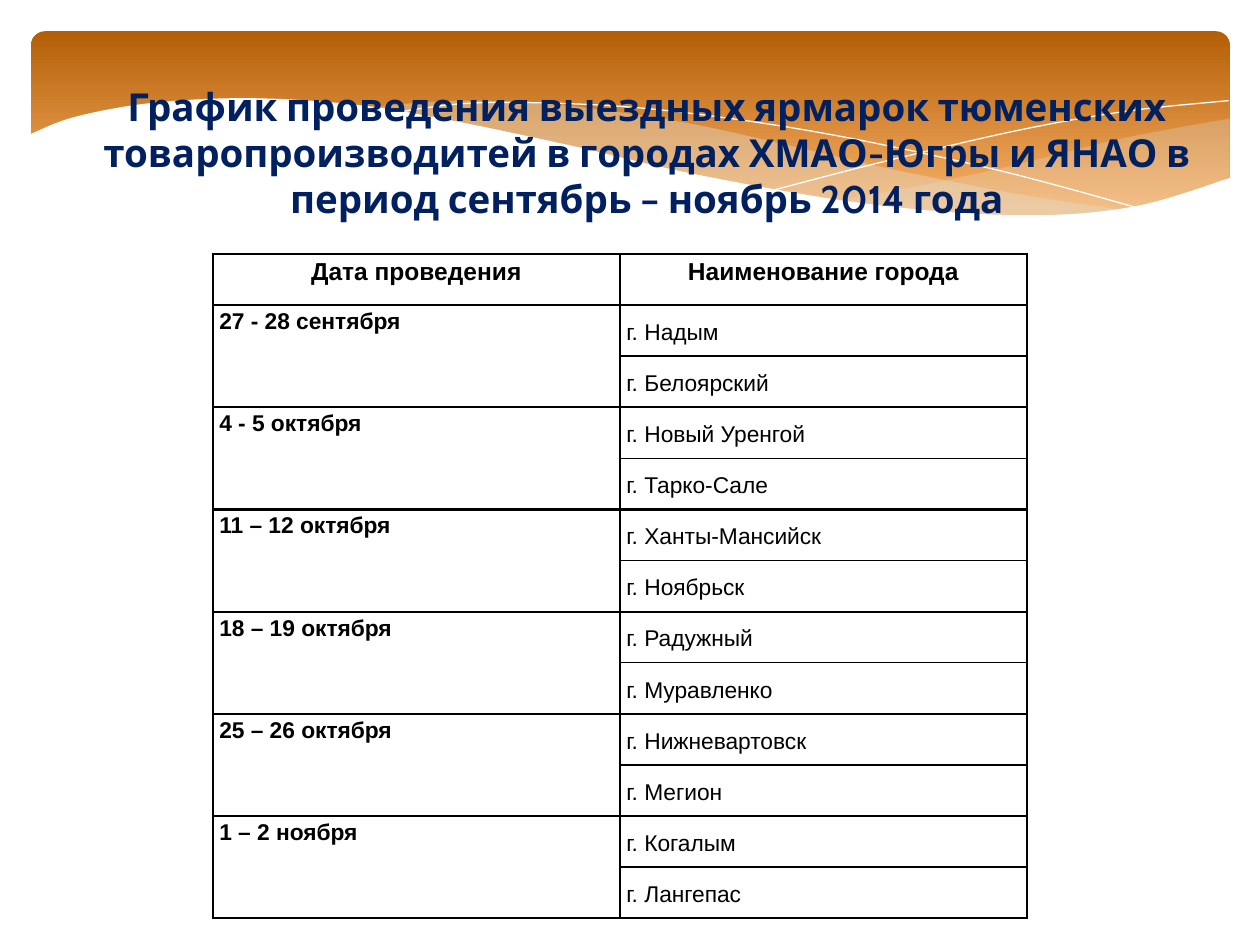
"""Builds the slide with the autumn schedule of travelling fairs."""
from itertools import chain
from lxml.etree import SubElement
from pptx import Presentation
from pptx.dml.color import RGBColor
from pptx.enum.shapes import MSO_SHAPE
from pptx.enum.text import MSO_ANCHOR as Anchor, PP_ALIGN as Align
from pptx.oxml.ns import qn
from pptx.util import Cm, Pt

WHITE = RGBColor(0xFF, 0xFF, 0xFF)
BLACK = RGBColor(0x00, 0x00, 0x00)
NAVY = RGBColor(0x00, 0x20, 0x60)
DARK_ORANGE = RGBColor(0xB4, 0x5F, 0x07)
LIGHT_ORANGE = RGBColor(0xF9, 0xB2, 0x68)
SAND = RGBColor(0xE3, 0xDE, 0xD1)

TITLE = ("График проведения выездных ярмарок тюменских товаропроизводитей "
         "в городах ХМАО-Югры и ЯНАО в период сентябрь – ноябрь 2014 года")
HEADERS = ("Дата проведения", "Наименование города")
FAIRS = [
    ("27 - 28 сентября", ("г. Надым", "г. Белоярский")),
    ("4 - 5 октября", ("г. Новый Уренгой", "г. Тарко-Сале")),
    ("11 – 12 октября", ("г. Ханты-Мансийск", "г. Ноябрьск")),
    ("18 – 19 октября", ("г. Радужный", "г. Муравленко")),
    ("25 – 26 октября", ("г. Нижневартовск", "г. Мегион")),
    ("1 – 2 ноября", ("г. Когалым", "г. Лангепас")),
]

SHORT_WAVE_TOP = [(24.79, 2.39), (22.63, 2.79), (20.45, 3.33), (18.5, 3.75), (16.79, 4.06)]
SHORT_WAVE_BOTTOM = [(16.79, 4.06), (18.92, 4.29), (21.21, 4.37), (22.99, 4.22), (24.79, 3.58)]
LONG_WAVE_TOP = [
    (7.26, 2.18), (9.17, 2.03), (11.23, 2.11), (13.74, 2.46),
    (15.98, 2.95), (17.93, 3.4), (20.5, 3.91), (22.68, 4.24),
]
LONG_WAVE_BOTTOM = [
    (22.68, 4.24), (20.78, 4.39), (18.34, 4.27), (16.1, 3.96),
    (13.46, 3.43), (11.4, 2.95), (9.19, 2.46), (7.26, 2.18),
]
FALLING_LINE = [
    (7.85, 2.29), (9.5, 2.08), (11.91, 2.11), (14.12, 2.31),
    (16.89, 2.74), (20.19, 3.45), (23.04, 4.22),
]
RISING_LINE = [(15.57, 3.84), (17.65, 3.3), (20.47, 2.64), (22.73, 2.24), (24.77, 2.03)]
WHITE_CREST = [
    (24.82, 3.58), (22.83, 4.17), (20.52, 4.34), (17.48, 4.11), (14.1, 3.53), (11.35, 2.9),
    (8.64, 2.34), (6.88, 2.08), (4.9, 1.98), (3.02, 2.08), (1.5, 2.36), (0.58, 2.72),
]
WHITE_BASE = [(0.58, 5.69), (24.82, 5.69)]

FILLED_WAVES = [
    ((SHORT_WAVE_TOP, SHORT_WAVE_BOTTOM), SAND, 29),
    ((LONG_WAVE_TOP, LONG_WAVE_BOTTOM), SAND, 40),
]
WAVE_LINES = [FALLING_LINE, RISING_LINE]
STEPS_PER_SPAN = 8

THIN, THICK = 1, 1.5
HEADER_SIZE, BODY_SIZE = 14, 13


def spline(before, start, end, after, t):
    """Gives one coordinate of a Catmull-Rom curve between start and end."""
    return 0.5 * (2 * start + (end - before) * t
                  + (2 * before - 5 * start + 4 * end - after) * t ** 2
                  + (3 * start - before - 3 * end + after) * t ** 3)


def smooth_curve(knots):
    """Returns close points on the smooth curve that runs through the knots."""
    padded = [knots[0], *knots, knots[-1]]
    points = [
        tuple(spline(*axis, step / STEPS_PER_SPAN) for axis in zip(*span))
        for span in zip(padded, padded[1:], padded[2:], padded[3:])
        for step in range(STEPS_PER_SPAN)
    ]
    return points + [knots[-1]]


def add_outline(slide, edges, close):
    """Adds a freeform whose edges are smooth curves with corners between them."""
    curves = chain.from_iterable(smooth_curve(edge) for edge in edges)
    points = [(Cm(x), Cm(y)) for x, y in curves]
    builder = slide.shapes.build_freeform(*points[0], scale=1)
    builder.add_line_segments(points[1:], close=close)
    shape = builder.convert_to_shape()
    shape.shadow.inherit = False
    return shape


def add_filled_wave(slide, edges, color, opacity=100):
    """Adds a closed wave with a plain or see-through fill."""
    wave = add_outline(slide, edges, close=True)
    wave.line.fill.background()
    wave.fill.solid()
    wave.fill.fore_color.rgb = color
    if opacity < 100:
        fill_color = wave.element.spPr.find(qn("a:solidFill"))[0]
        SubElement(fill_color, qn("a:alpha"), val=str(opacity * 1000))


def add_wave_line(slide, knots):
    """Adds an open white hairline."""
    wave_line = add_outline(slide, [knots], close=False)
    wave_line.fill.background()
    wave_line.line.color.rgb = WHITE
    wave_line.line.width = Pt(0)


def add_band(slide):
    """Adds the orange band behind the title."""
    band = slide.shapes.add_shape(
        MSO_SHAPE.ROUNDED_RECTANGLE, Cm(0.63), Cm(0.63), Cm(24.16), Cm(3.96))
    band.adjustments[0] = 0.07
    band.shadow.inherit = False
    band.line.fill.background()
    band.fill.gradient()
    band.fill.gradient_angle = 270
    stops = ((0, DARK_ORANGE), (0.9, LIGHT_ORANGE))
    for stop, (position, color) in zip(band.fill.gradient_stops, stops):
        stop.position = position
        stop.color.rgb = color


def write_text(text_frame, text, size, font_name, color, bold, alignment):
    """Sets the text of a frame and formats its one paragraph."""
    text_frame.text = text
    paragraph = text_frame.paragraphs[0]
    paragraph.alignment = alignment
    font = paragraph.runs[0].font
    font.size, font.name, font.bold = Pt(size), font_name, bold
    font.color.rgb = color
    return paragraph


def add_title(slide):
    """Adds the centred slide title."""
    title = slide.shapes.add_textbox(Cm(1.35), Cm(1.55), Cm(23.39), Cm(3.07))
    title.text_frame.word_wrap = True
    write_text(title.text_frame, TITLE, 22, "Cabin", NAVY, True, Align.CENTER)


def style_cell(cell, side, top, bottom):
    """Sets the margins, the border widths and the empty fill of a cell."""
    cell.margin_left = cell.margin_right = Cm(0.13)
    cell.margin_top = cell.margin_bottom = 0
    properties = cell._tc.get_or_add_tcPr()
    for edge, width in (("L", side), ("R", side), ("T", top), ("B", bottom)):
        border = SubElement(properties, qn(f"a:ln{edge}"), w=str(Pt(width)))
        border_fill = SubElement(border, qn("a:solidFill"))
        SubElement(border_fill, qn("a:srgbClr"), val=str(BLACK))
    cell.fill.background()


def write_cell(cell, text, size=BODY_SIZE, bold=True, alignment=Align.LEFT, anchor=Anchor.TOP):
    """Writes the text of a table cell."""
    paragraph = write_text(cell.text_frame, text, size, "Arial", BLACK, bold, alignment)
    paragraph.line_spacing = 1.15
    cell.vertical_anchor = anchor


def add_schedule(slide):
    """Adds the table with one merged date cell for the cities of each fair."""
    row_count = 1 + sum(len(cities) for _, cities in FAIRS)
    table = slide.shapes.add_table(
        row_count, len(HEADERS), Cm(4.29), Cm(5.12), Cm(16.41), Cm(13.4)).table
    for column, header in enumerate(HEADERS):
        style_cell(table.cell(0, column), THICK, THICK, THICK)
        write_cell(table.cell(0, column), header, HEADER_SIZE, alignment=Align.CENTER)
    first_row = 1
    for date, cities in FAIRS:
        last_row = first_row + len(cities) - 1
        for row, city in enumerate(cities, first_row):
            date_cell, city_cell = table.cell(row, 0), table.cell(row, 1)
            style_cell(date_cell, THIN, THICK, THICK)
            style_cell(city_cell, THIN,
                       THICK if row == first_row else THIN,
                       THICK if row == last_row else THIN)
            write_cell(city_cell, city, bold=False, anchor=Anchor.MIDDLE)
        table.cell(first_row, 0).merge(table.cell(last_row, 0))
        write_cell(table.cell(first_row, 0), date)
        first_row = last_row + 1


def main():
    """Builds and saves the presentation."""
    presentation = Presentation()
    presentation.slide_width, presentation.slide_height = Cm(25.4), Cm(19.05)
    slide = presentation.slides.add_slide(presentation.slide_layouts[6])
    add_band(slide)
    for edges, color, opacity in FILLED_WAVES:
        add_filled_wave(slide, edges, color, opacity)
    for knots in WAVE_LINES:
        add_wave_line(slide, knots)
    add_filled_wave(slide, (WHITE_CREST, WHITE_BASE), WHITE)
    add_title(slide)
    add_schedule(slide)
    presentation.save("out.pptx")


if __name__ == "__main__":
    main()
